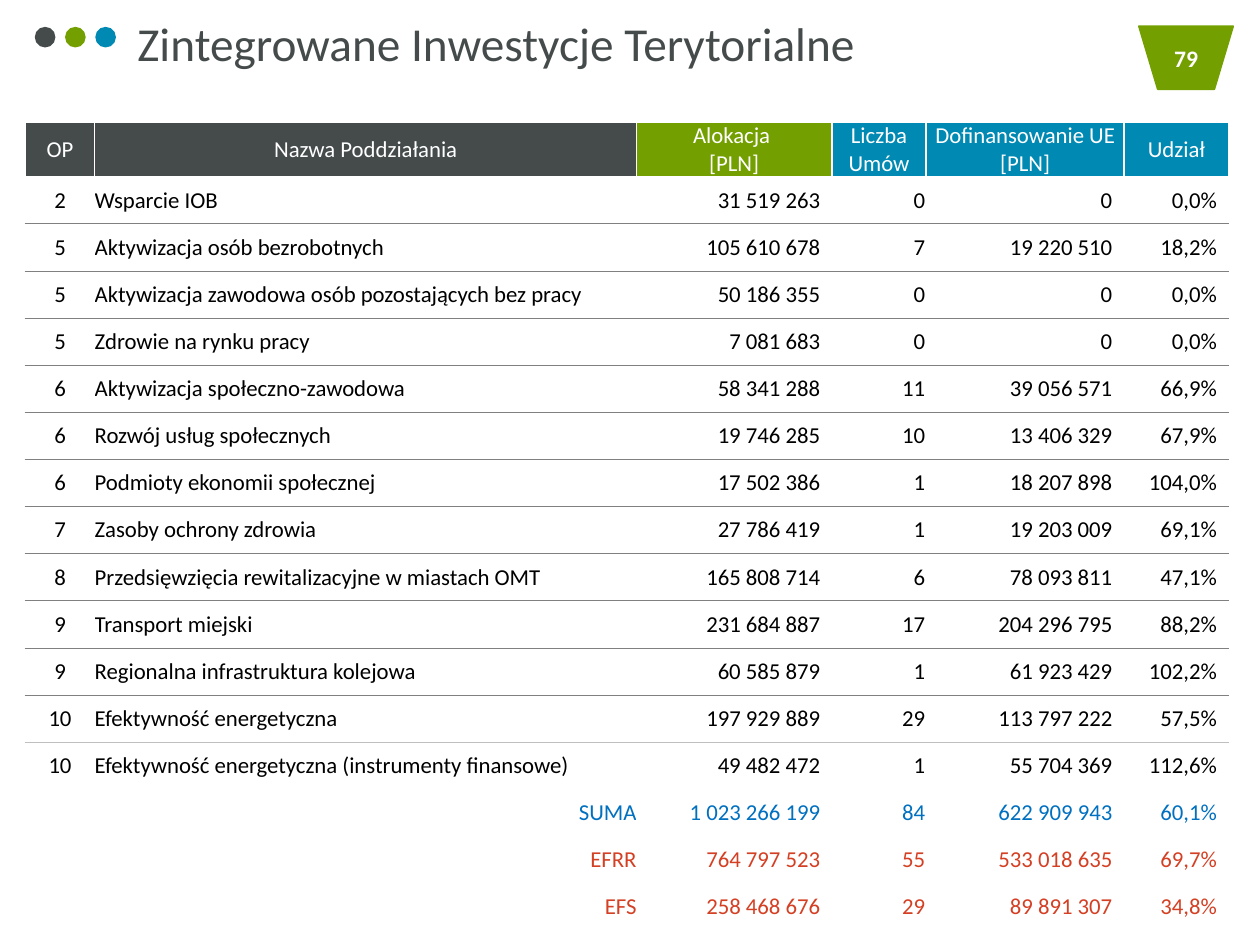
from dataclasses import dataclass

from lxml.etree import SubElement
from pptx import Presentation
from pptx.dml.color import RGBColor
from pptx.enum.shapes import MSO_SHAPE as Shape
from pptx.enum.text import MSO_ANCHOR as Anchor, MSO_AUTO_SIZE as AutoSize, PP_ALIGN as Align
from pptx.oxml.ns import qn
from pptx.util import Cm, Pt


@dataclass(frozen=True)
class Theme:
    font: str = "Calibri"
    title_size: float = 27
    badge_size: float = 13.5
    table_size: float = 13
    dark: str = "454B4B"
    green: str = "73A000"
    blue: str = "0089B3"
    white: str = "FFFFFF"
    black: str = "000000"
    total: str = "0070C0"
    fund: str = "D44024"
    rule: str = "808080"
    light_rule: str = "BFBFBF"


T = Theme()
TITLE = "Zintegrowane Inwestycje Terytorialne"
PAGE = "79"

# heading, width in cm, header fill, alignment, right inset in cm
COLUMNS = [
    ("OP", 1.4, T.dark, Align.CENTER, 0),
    ("Nazwa Poddziałania", 10.92, T.dark, Align.LEFT, 0),
    ("Alokacja \v[PLN]", 3.94, T.green, Align.RIGHT, 0.24),
    ("Liczba Umów", 1.9, T.blue, Align.RIGHT, 0.02),
    ("Dofinansowanie UE [PLN]", 3.99, T.blue, Align.RIGHT, 0.24),
    ("Udział", 2.11, T.blue, Align.RIGHT, 0.24),
]
MEASURES = [
    ("2", "Wsparcie IOB", "31 519 263", "0", "0", "0,0%"),
    ("5", "Aktywizacja osób bezrobotnych", "105 610 678", "7", "19 220 510", "18,2%"),
    ("5", "Aktywizacja zawodowa osób pozostających bez pracy", "50 186 355", "0", "0", "0,0%"),
    ("5", "Zdrowie na rynku pracy", "7 081 683", "0", "0", "0,0%"),
    ("6", "Aktywizacja społeczno-zawodowa", "58 341 288", "11", "39 056 571", "66,9%"),
    ("6", "Rozwój usług społecznych", "19 746 285", "10", "13 406 329", "67,9%"),
    ("6", "Podmioty ekonomii społecznej", "17 502 386", "1", "18 207 898", "104,0%"),
    ("7", "Zasoby ochrony zdrowia", "27 786 419", "1", "19 203 009", "69,1%"),
    ("8", "Przedsięwzięcia rewitalizacyjne w miastach OMT", "165 808 714", "6", "78 093 811", "47,1%"),
    ("9", "Transport miejski", "231 684 887", "17", "204 296 795", "88,2%"),
    ("9", "Regionalna infrastruktura kolejowa", "60 585 879", "1", "61 923 429", "102,2%"),
    ("10", "Efektywność energetyczna", "197 929 889", "29", "113 797 222", "57,5%"),
    ("10", "Efektywność energetyczna (instrumenty finansowe)", "49 482 472", "1", "55 704 369", "112,6%"),
]
TOTALS = [
    ("", "SUMA", "1 023 266 199", "84", "622 909 943", "60,1%"),
    ("", "EFRR", "764 797 523", "55", "533 018 635", "69,7%"),
    ("", "EFS", "258 468 676", "29", "89 891 307", "34,8%"),
]
TOTAL_COLORS = [T.total, T.fund, T.fund]
HEADER_H, ROW_H = 1.09, 0.95


def rgb(color):
    return RGBColor.from_string(color)


def style_text(tf, size, color, align, bold=False):
    for p in tf.paragraphs:
        p.alignment = align
        for r in p.runs:
            r.font.name, r.font.size, r.font.bold = T.font, Pt(size), bold
            r.font.color.rgb = rgb(color)


def add_solid(shapes, kind, x, y, w, h, color):
    sp = shapes.add_shape(kind, Cm(x), Cm(y), Cm(w), Cm(h))
    sp.shadow.inherit = False
    sp.fill.solid()
    sp.fill.fore_color.rgb = sp.line.color.rgb = rgb(color)
    sp.line.width = Pt(1)
    return sp


def set_borders(cell, top, bottom):
    """Draw white sides and the given (color, points) top and bottom edges."""
    side = (T.white, 1)
    for tag, (color, width) in zip(("lnL", "lnR", "lnT", "lnB"), (side, side, top, bottom)):
        ln = SubElement(cell._tc.get_or_add_tcPr(), qn("a:" + tag), w=str(Pt(width)))
        SubElement(SubElement(ln, qn("a:solidFill")), qn("a:srgbClr"), val=color)


def add_header_marks(slide):
    dots = slide.shapes.add_group_shape()
    for i, color in enumerate((T.dark, T.green, T.blue)):
        add_solid(dots.shapes, Shape.OVAL, 0.72 + 0.61 * i, 0.56, 0.38, 0.38, color)

    badge = add_solid(slide.shapes, Shape.FLOWCHART_MANUAL_OPERATION, 22.96, 0.53, 1.9, 1.27, T.green)
    tf = badge.text_frame
    tf.text = PAGE
    tf.vertical_anchor = Anchor.MIDDLE
    style_text(tf, T.badge_size, T.white, Align.CENTER, bold=True)

    tf = slide.shapes.add_textbox(Cm(2.77), Cm(0.28), Cm(14.55), Cm(1.14)).text_frame
    tf.margin_left = tf.margin_top = tf.margin_right = tf.margin_bottom = 0
    tf.word_wrap = False
    tf.auto_size = AutoSize.SHAPE_TO_FIT_TEXT
    tf.text = TITLE
    style_text(tf, T.title_size, T.dark, Align.LEFT)


def add_measures_table(slide):
    rows = [[c[0] for c in COLUMNS], *MEASURES, *TOTALS]
    colors = [T.white] + [T.black] * len(MEASURES) + TOTAL_COLORS
    white_edge = (T.white, 1)
    edges = [white_edge] * 2 + [(T.rule, 0.5)] * (len(MEASURES) - 2)
    edges += [(T.light_rule, 1)] + [white_edge] * (len(TOTALS) + 1)

    width = sum(c[1] for c in COLUMNS)
    height = HEADER_H + ROW_H * (len(rows) - 1)
    table = slide.shapes.add_table(len(rows), len(COLUMNS), Cm(0.51), Cm(2.46),
                                   Cm(width), Cm(height)).table
    table.first_row = table.horz_banding = False
    for column, spec_row in zip(table.columns, COLUMNS):
        column.width = Cm(spec_row[1])

    for i, values in enumerate(rows):
        is_header, is_total = i == 0, i > len(MEASURES)
        table.rows[i].height = Cm(HEADER_H if is_header else ROW_H)
        for j, (_, _, fill, align, inset) in enumerate(COLUMNS):
            cell = table.cell(i, j)
            cell.margin_left = cell.margin_top = cell.margin_bottom = 0
            cell.margin_right = 0 if is_header else Cm(inset)
            cell.vertical_anchor = Anchor.MIDDLE
            set_borders(cell, edges[i], edges[i + 1])
            if is_header:
                cell.fill.solid()
                cell.fill.fore_color.rgb = rgb(fill)
                align = Align.CENTER
            else:
                cell.fill.background()
                if is_total:
                    align = Align.RIGHT
            cell.text_frame.text = values[j]
            style_text(cell.text_frame, T.table_size, colors[i], align)


def main():
    prs = Presentation()
    prs.slide_width, prs.slide_height = Cm(25.4), Cm(19.05)
    slide = prs.slides.add_slide(prs.slide_layouts[6])
    add_header_marks(slide)
    add_measures_table(slide)
    prs.save("out.pptx")


if __name__ == "__main__":
    main()
